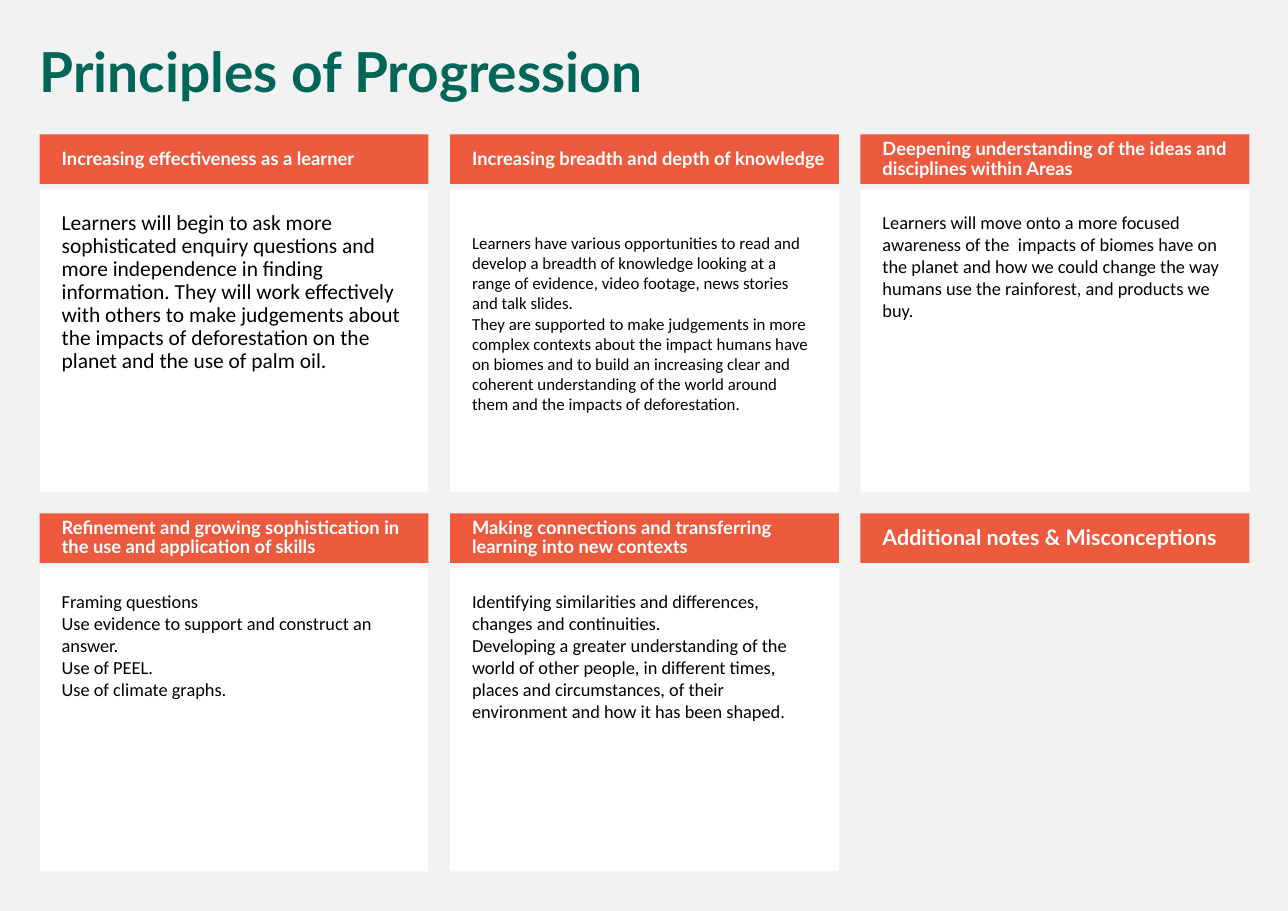
from dataclasses import dataclass

from pptx import Presentation
from pptx.dml.color import RGBColor
from pptx.enum.shapes import MSO_SHAPE
from pptx.enum.text import MSO_ANCHOR, PP_ALIGN
from pptx.util import Inches, Pt

RECT = MSO_SHAPE.RECTANGLE
TOP, MIDDLE = MSO_ANCHOR.TOP, MSO_ANCHOR.MIDDLE
LEFT = PP_ALIGN.LEFT

COLORS = {"back": "F2F2F2", "head": "ED5A3E", "card": "FFFFFF",
          "title": "006758", "light": "FFFFFF", "body": "000000"}

# Grid, in inches
GRID_X, GRID_Y = 0.36, 1.22
COL_STEP, ROW_STEP = 3.725, 3.44
CARD_W, HEAD_H, CARD_H = 3.53, 0.45, 2.75
CARD_DROP = 0.5


@dataclass
class Style:
    font: str
    size: float
    color: str
    bold: bool = False
    spacing: float = 1.0
    anchor: int = TOP
    insets: tuple[float, float, float, float] = (0.2, 0.2, 0.2, 0.2)


@dataclass
class Principle:
    col: int
    row: int
    heading: str
    body: tuple[str, ...] = ()
    head_size: float = 12
    body_size: float = 12
    body_spacing: float = 1.0
    body_top: float = 0.2


PRINCIPLES = [
    Principle(0, 0, "Increasing effectiveness as a learner", (
        "Learners will begin to ask more sophisticated enquiry questions and "
        "more independence in finding information. They will work effectively "
        "with others to make judgements about the impacts of deforestation on "
        "the planet and the use of palm oil.",),
        body_size=14, body_spacing=0.9),
    Principle(1, 0, "Increasing breadth and depth of knowledge", (
        "Learners have various opportunities to read and develop a breadth of "
        "knowledge looking at a range of evidence, video footage, news "
        "stories and talk slides.",
        "They are supported to make judgements in more complex contexts about "
        "the impact humans have on biomes and to build an increasing clear and "
        "coherent understanding of the world around them and the impacts "
        "of deforestation."),
        body_size=11, body_top=0.39),
    Principle(2, 0, "Deepening understanding of the ideas and disciplines within Areas", (
        "Learners will move onto a more focused awareness of the  impacts of "
        "biomes have on the planet and how we could change the way humans use "
        "the rainforest, and products we buy.",)),
    Principle(0, 1, "Refinement and growing sophistication in the use and application of skills", (
        "Framing questions",
        "Use evidence to support and construct an answer.",
        "Use of PEEL.",
        "Use of climate graphs.")),
    Principle(1, 1, "Making connections and transferring learning into new contexts", (
        "Identifying similarities and differences, changes and continuities.",
        "Developing a greater understanding of the world of other people, "
        "in different times, places and circumstances, of their environment "
        "and how it has been shaped.")),
    Principle(2, 1, "Additional notes & Misconceptions", head_size=14),
]


def write(sp, lines: tuple[str, ...], style: Style) -> None:
    """Fill a shape with one paragraph per line."""
    tf = sp.text_frame
    left, top, right, bottom = map(Inches, style.insets)
    frame = {"word_wrap": True, "vertical_anchor": style.anchor,
             "margin_left": left, "margin_top": top,
             "margin_right": right, "margin_bottom": bottom}
    for name, value in frame.items():
        setattr(tf, name, value)
    font = {"name": style.font, "size": Pt(style.size), "bold": style.bold}
    for i, line in enumerate(lines):
        p = tf.add_paragraph() if i else tf.paragraphs[0]
        p.alignment, p.line_spacing = LEFT, style.spacing
        r = p.add_run()
        r.text = line
        for name, value in font.items():
            setattr(r.font, name, value)
        r.font.color.rgb = RGBColor.from_string(COLORS[style.color])


def add_panel(slide, x: float, y: float, height: float, fill: str,
              lines: tuple[str, ...], style: Style) -> None:
    """Draw a flat rectangle, one column wide, with text."""
    sp = slide.shapes.add_shape(RECT, Inches(x), Inches(y), Inches(CARD_W), Inches(height))
    sp.shadow.inherit = False
    sp.fill.solid()
    sp.fill.fore_color.rgb = RGBColor.from_string(COLORS[fill])
    sp.line.fill.background()
    write(sp, lines, style)


def add_principle(slide, item: Principle) -> None:
    """Draw a heading bar and, where there is text, the card under it."""
    x = GRID_X + item.col * COL_STEP
    y = GRID_Y + item.row * ROW_STEP
    add_panel(slide, x, y, HEAD_H, "head", (item.heading,),
              Style("Lato", item.head_size, "light", True, 0.9, MIDDLE, (0.2, 0.05, 0.1, 0.05)))
    if item.body:
        add_panel(slide, x, y + CARD_DROP, CARD_H, "card", item.body,
                  Style("Calibri", item.body_size, "body", spacing=item.body_spacing,
                        insets=(0.2, item.body_top, 0.2, 0.2)))


def main() -> None:
    prs = Presentation()
    prs.slide_width, prs.slide_height = Inches(11.69), Inches(8.27)
    slide = prs.slides.add_slide(prs.slide_layouts[6])

    # Background
    slide.background.fill.solid()
    slide.background.fill.fore_color.rgb = RGBColor.from_string(COLORS["back"])

    # Title
    sp = slide.shapes.add_textbox(Inches(0.26), Inches(0.36), Inches(11.08), Inches(0.65))
    write(sp, ("Principles of Progression",),
          Style("Lato", 36, "title", True, 0.9, insets=(0.1, 0.05, 0.1, 0.05)))

    # Principles
    for item in PRINCIPLES:
        add_principle(slide, item)

    prs.save("out.pptx")


if __name__ == "__main__":
    main()
